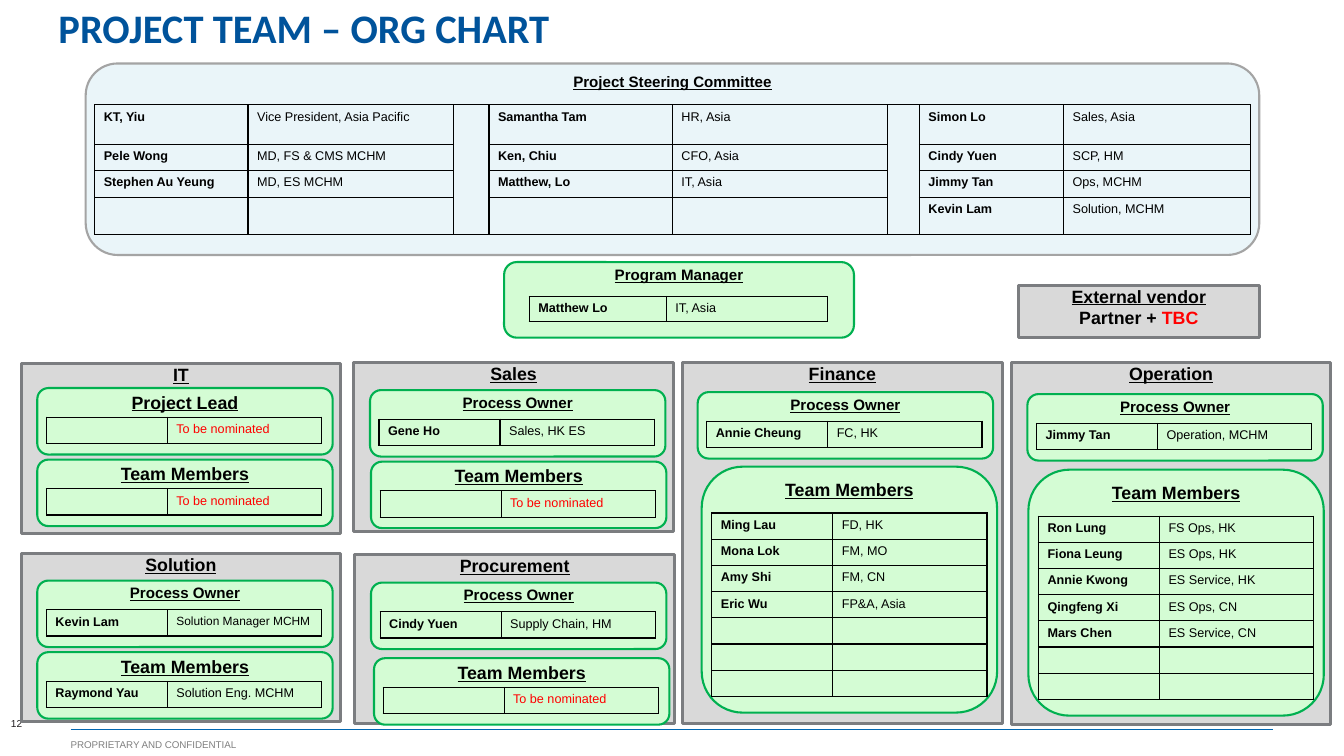
from lxml.etree import SubElement
from pptx import Presentation
from pptx.dml.color import RGBColor
from pptx.enum.shapes import MSO_CONNECTOR, MSO_SHAPE
from pptx.enum.text import MSO_ANCHOR, PP_ALIGN
from pptx.oxml.ns import qn
from pptx.util import Inches, Pt

BLACK, RED, GREY, GREEN = "000000", "FF0000", "D9D9D9", "D4FCD4"
DARK_GREY, DARK_GREEN = "7B7D80", "00B050"
TBN = "To be nominated"
ROW_H = 0.26


def rgb(hex_color):
    return RGBColor.from_string(hex_color)


def add_run(p, text, size=9, color=BLACK, bold=False, underline=False, font="Arial"):
    r = p.add_run()
    r.text = text
    r.font.name, r.font.size = font, Pt(size)
    r.font.bold, r.font.underline = bold, underline
    r.font.color.rgb = rgb(color)


def add_text(s, x, y, w, h, text, anchor=MSO_ANCHOR.BOTTOM, inset=0, align=PP_ALIGN.LEFT,
             spacing=1.0, **fmt):
    tf = s.shapes.add_textbox(Inches(x), Inches(y), Inches(w), Inches(h)).text_frame
    tf.word_wrap, tf.vertical_anchor = True, anchor
    tf.margin_left = tf.margin_right = tf.margin_top = tf.margin_bottom = Inches(inset)
    p = tf.paragraphs[0]
    p.alignment, p.line_spacing = align, spacing
    add_run(p, text, **fmt)


def add_box(s, x, y, w, h, title, size, fill, line, width, kind=MSO_SHAPE.ROUNDED_RECTANGLE):
    """Filled box with an underlined heading at its top."""
    sp = s.shapes.add_shape(kind, Inches(x), Inches(y), Inches(w), Inches(h))
    sp.shadow.inherit = False
    sp.fill.solid()
    sp.fill.fore_color.rgb = rgb(fill)
    sp.line.color.rgb = rgb(line)
    sp.line.width = Pt(width)
    tf = sp.text_frame
    tf.word_wrap, tf.vertical_anchor = True, MSO_ANCHOR.TOP
    tf.margin_left = tf.margin_right = tf.margin_top = tf.margin_bottom = 0
    p = tf.paragraphs[0]
    p.alignment = PP_ALIGN.CENTER
    add_run(p, title, size=size, bold=True, underline=True)
    return tf


def style_cell(cell):
    """No fill, thin black border on every side."""
    cell.margin_left = cell.margin_right = Inches(0.09)
    cell.margin_top = cell.margin_bottom = Inches(0.05)
    tcPr = cell._tc.get_or_add_tcPr()
    for side in ("a:lnL", "a:lnR", "a:lnT", "a:lnB"):
        ln = SubElement(tcPr, qn(side), w=str(Pt(1)))
        SubElement(SubElement(ln, qn("a:solidFill")), qn("a:srgbClr"), val=BLACK)
    cell.fill.background()


def add_people(s, x, y, cols, heights, rows, detail_size=9):
    """Name and position pairs; every third column is a gap between pairs."""
    frame = s.shapes.add_table(len(rows), len(cols), Inches(x), Inches(y),
                               Inches(sum(cols)), Inches(sum(heights)))
    table = frame.table
    table.first_row = table.horz_banding = False
    for col, w in zip(table.columns, cols):
        col.width = Inches(w)
    for row, h in zip(table.rows, heights):
        row.height = Inches(h)
    for i, texts in enumerate(rows):
        for j, text in enumerate(texts):
            cell = table.cell(i, j)
            style_cell(cell)
            p = cell.text_frame.paragraphs[0]
            if text:
                is_name = j % 3 == 0
                add_run(p, text, size=9 if is_name else detail_size, bold=is_name,
                        color=RED if text == TBN else BLACK)
            else:
                SubElement(p._p, qn("a:endParaRPr"), sz="900")
    for j in range(2, len(cols), 3):
        table.cell(0, j).merge(table.cell(len(rows) - 1, j))


def add_role(s, x, y, title, size, rows, detail_size=9):
    """Green role box, as tall as its list of people needs."""
    is_list = len(rows) > 1
    dx, dy, bottom = (0.1, 0.46, 0.16) if is_list else (0.09, 0.29, 0.11)
    h = dy + ROW_H * len(rows) + bottom
    add_box(s, x, y, 2.93, h, title, size, GREEN, DARK_GREEN, 1.5)
    add_people(s, x + dx, y + dy, [1.2, 1.53], [ROW_H] * len(rows), rows, detail_size)


def add_department(s, x, y, h, name, roles):
    add_box(s, x, y, 3.17, h, name, 12.7, GREY, DARK_GREY, 2.25, MSO_SHAPE.RECTANGLE)
    for dx, dy, *role in roles:
        add_role(s, x + dx, y + dy, *role)


def add_committee(s, x, y):
    add_box(s, x, y, 11.64, 1.9, "Project Steering Committee", 10.8, "EAF5F9", "A4A4A4", 1.5)
    add_people(s, x + 0.09, y + 0.41, [1.52, 2.04, 0.35, 1.82, 2.13, 0.32, 1.43, 1.85],
               [0.39, 0.26, 0.27, 0.37], [
        ["KT, Yiu", "Vice President, Asia Pacific", "", "Samantha Tam", "HR, Asia", "",
         "Simon Lo", "Sales, Asia"],
        ["Pele Wong", "MD, FS & CMS MCHM", "", "Ken, Chiu", "CFO, Asia", "",
         "Cindy Yuen", "SCP, HM"],
        ["Stephen Au Yeung", "MD, ES MCHM", "", "Matthew, Lo", "IT, Asia", "",
         "Jimmy Tan", "Ops, MCHM"],
        ["", "", "", "", "", "", "Kevin Lam", "Solution, MCHM"],
    ])


def add_manager(s, x, y):
    add_box(s, x, y, 3.47, 0.75, "Program Manager", 10.8, GREEN, DARK_GREEN, 1.5)
    add_people(s, x + 0.25, y + 0.34, [1.36, 1.6], [0.24], [["Matthew Lo", "IT, Asia"]])


def add_vendor(s, x, y):
    tf = add_box(s, x, y, 2.39, 0.52, "External vendor", 12.7, GREY, DARK_GREY, 2.25,
                 MSO_SHAPE.RECTANGLE)
    p = tf.add_paragraph()
    p.alignment = PP_ALIGN.CENTER
    add_run(p, "Partner +", size=12.7, bold=True)
    add_run(p, " TBC", size=12.7, bold=True, color=RED)


def add_footer(s, x, y):
    rule = s.shapes.add_connector(MSO_CONNECTOR.STRAIGHT, Inches(x), Inches(y),
                                  Inches(x + 11.93), Inches(y))
    rule.line.color.rgb = rgb("0067B1")
    rule.line.width = Pt(1)
    SubElement(rule._element.spPr, qn("a:effectLst"))
    add_text(s, x, y + 0.08, 1.82, 0.12, "PROPRIETARY AND CONFIDENTIAL", size=7, color="808080")
    add_text(s, x - 0.74, y - 0.28, 0.41, 0.44, "12", anchor=MSO_ANCHOR.MIDDLE, inset=0.05,
             align=PP_ALIGN.CENTER, size=7.2, color="221E20")


# Departments: x, y, height, name, roles (dx, dy, title, title size, people)
OWNER, TEAM = ("Process Owner", 10.8), ("Team Members", 12.7)
OPEN_SEAT = [["", TBN]]
DEPARTMENTS = [
    (0.21, 3.61, 1.68, "IT", [
        (0.16, 0.24, "Project Lead", 12.7, OPEN_SEAT),
        (0.16, 0.95, *TEAM, OPEN_SEAT)]),
    (3.51, 3.6, 1.67, "Sales", [
        (0.16, 0.27, *OWNER, [["Gene Ho", "Sales, HK ES"]]),
        (0.17, 0.98, *TEAM, OPEN_SEAT)]),
    (0.21, 5.49, 1.67, "Solution", [
        (0.16, 0.27, *OWNER, [["Kevin Lam", "Solution Manager MCHM"]], 8.5),
        (0.16, 0.98, *TEAM, [["Raymond Yau", "Solution Eng. MCHM"]])]),
    (3.52, 5.5, 1.68, "Procurement", [
        (0.16, 0.28, *OWNER, [["Cindy Yuen", "Supply Chain, HM"]]),
        (0.19, 1.03, *TEAM, OPEN_SEAT)]),
    (6.77, 3.6, 3.58, "Finance", [
        (0.15, 0.29, *OWNER, [["Annie Cheung", "FC, HK"]]),
        (0.19, 1.03, *TEAM, [
            ["Ming Lau", "FD, HK"], ["Mona Lok", "FM, MO"], ["Amy Shi", "FM, CN"],
            ["Eric Wu", "FP&A, Asia"]] + [["", ""]] * 3)]),
    (10.03, 3.6, 3.59, "Operation", [
        (0.16, 0.31, *OWNER, [["Jimmy Tan", "Operation, MCHM"]]),
        (0.17, 1.06, *TEAM, [
            ["Ron Lung", "FS Ops, HK"], ["Fiona Leung", "ES Ops, HK"],
            ["Annie Kwong", "ES Service, HK"], ["Qingfeng Xi", "ES Ops, CN"],
            ["Mars Chen", "ES Service, CN"]] + [["", ""]] * 2)]),
]


def main():
    prs = Presentation()
    prs.slide_width, prs.slide_height = Inches(13.33), Inches(7.5)
    s = prs.slides.add_slide(prs.slide_layouts[6])
    add_footer(s, 0.7, 7.24)
    add_text(s, 0.58, 0, 12.18, 0.52, "PROJECT TEAM – ORG CHART", spacing=0.9,
             size=28.9, color="00539B", bold=True, font="Calibri")
    add_committee(s, 0.85, 0.63)
    add_manager(s, 5, 2.6)
    add_vendor(s, 10.1, 2.83)
    for department in DEPARTMENTS:
        add_department(s, *department)
    prs.save("out.pptx")


if __name__ == "__main__":
    main()
